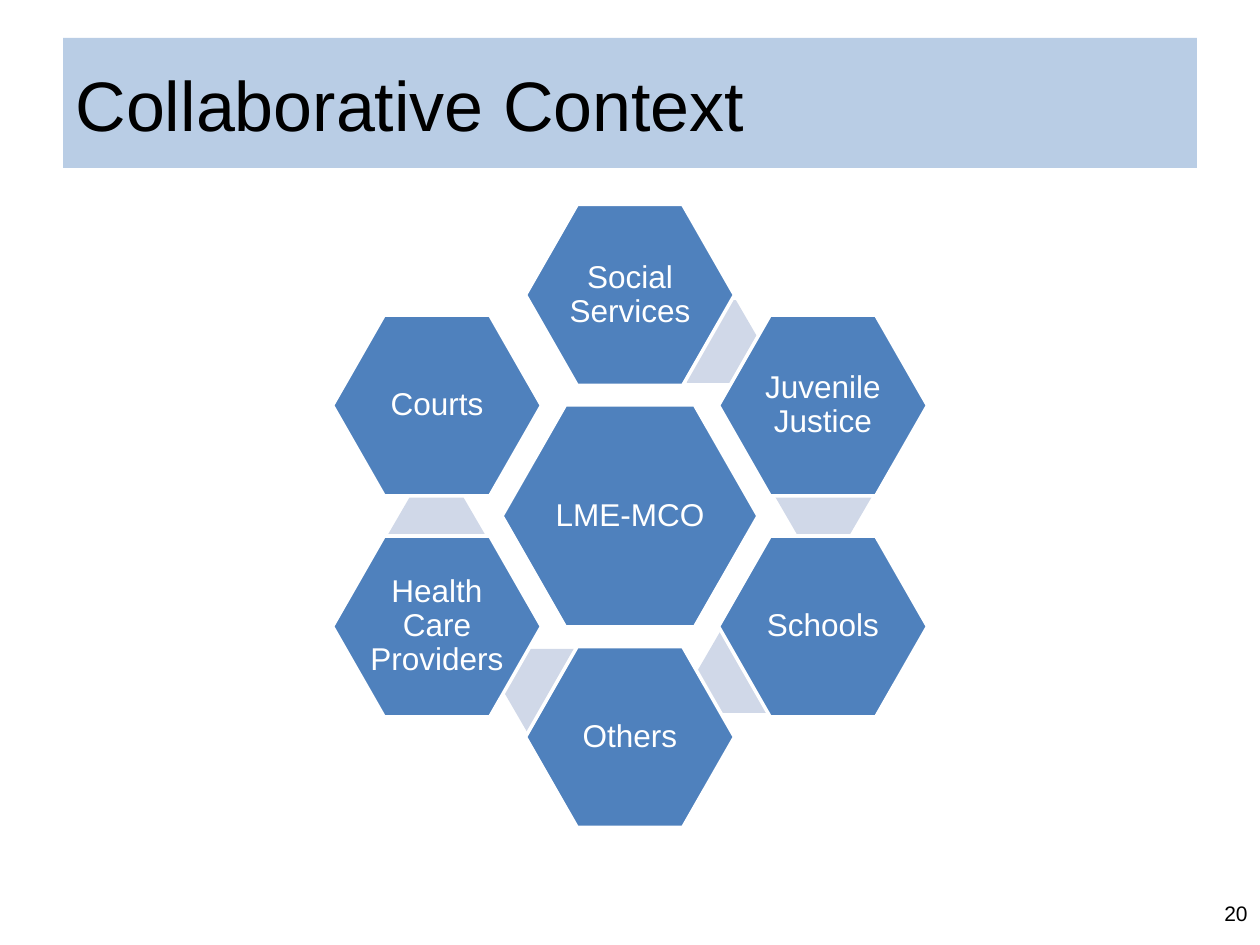
from pptx import Presentation
from pptx.dml.color import RGBColor
from pptx.enum.shapes import MSO_SHAPE
from pptx.enum.text import MSO_ANCHOR, PP_ALIGN
from pptx.util import Pt

HEXAGON = MSO_SHAPE.HEXAGON
MIDDLE = MSO_ANCHOR.MIDDLE
LEFT, CENTER, RIGHT = PP_ALIGN.LEFT, PP_ALIGN.CENTER, PP_ALIGN.RIGHT

BLUE = RGBColor(0x4F, 0x81, 0xBD)
PALE = RGBColor(0xD0, 0xD8, 0xE8)
BAND = RGBColor(0xB9, 0xCD, 0xE5)
WHITE = RGBColor(0xFF, 0xFF, 0xFF)
BLACK = RGBColor(0, 0, 0)

SCALE = 914400 / 126  # EMU per px


def px(*values):
    return [round(v * SCALE) for v in values]


def write(shape, text, size, color, align):
    tf = shape.text_frame
    tf.word_wrap = True
    tf.vertical_anchor = MIDDLE
    p = tf.paragraphs[0]
    p.text = text
    p.alignment = align
    p.font.name = "Arial"
    p.font.size = Pt(size)
    p.font.color.rgb = color
    return tf


prs = Presentation()
prs.slide_width, prs.slide_height = px(1260, 945)
s = prs.slides.add_slide(prs.slide_layouts[5])

# Title band
title = s.shapes.title
title.left, title.top, title.width, title.height = px(63, 38, 1134, 130)
title.fill.solid()
title.fill.fore_color.rgb = BAND
write(title, "Collaborative Context", 40, BLACK, LEFT)

# Hexagons around the hub: text, column, row, top left of the link behind
CX, CY = 630, 516
COL, ROW = 193, 110.5
hexagons = [
    ("LME-MCO", 0, 0, None),
    ("Social Services", 0, -2, (663, 300)),
    ("Juvenile Justice", 1, -1, (775, 455)),
    ("Schools", 1, 1, (697, 630)),
    ("Others", 0, 2, (503, 649)),
    ("Health Care Providers", -1, 1, (388, 493)),
    ("Courts", -1, -1, None),
]
for text, col, row, link_at in hexagons:
    if link_at:
        link = s.shapes.add_shape(HEXAGON, *px(*link_at, 97, 83))
        link.adjustments[0] = 0.29
        link.shadow.inherit = False
        link.fill.solid()
        link.fill.fore_color.rgb = PALE
        link.line.fill.background()

    w, h = (256, 222) if text == "LME-MCO" else (209, 181)
    left, top = CX + col * COL - w / 2, CY + row * ROW - h / 2
    cell = s.shapes.add_shape(HEXAGON, *px(left, top, w, h))
    cell.adjustments[0] = 0.286
    cell.shadow.inherit = False
    cell.fill.solid()
    cell.fill.fore_color.rgb = BLUE
    cell.line.color.rgb = WHITE
    cell.line.width = Pt(2)
    tf = write(cell, text, 18, WHITE, CENTER)
    tf.margin_left = tf.margin_right = tf.margin_top = tf.margin_bottom = 0
    tf.paragraphs[0].line_spacing = 0.9

# Slide number
number = s.shapes.add_textbox(*px(966, 882, 294, 63))
write(number, "20", 12, BLACK, RIGHT)

prs.save("out.pptx")
